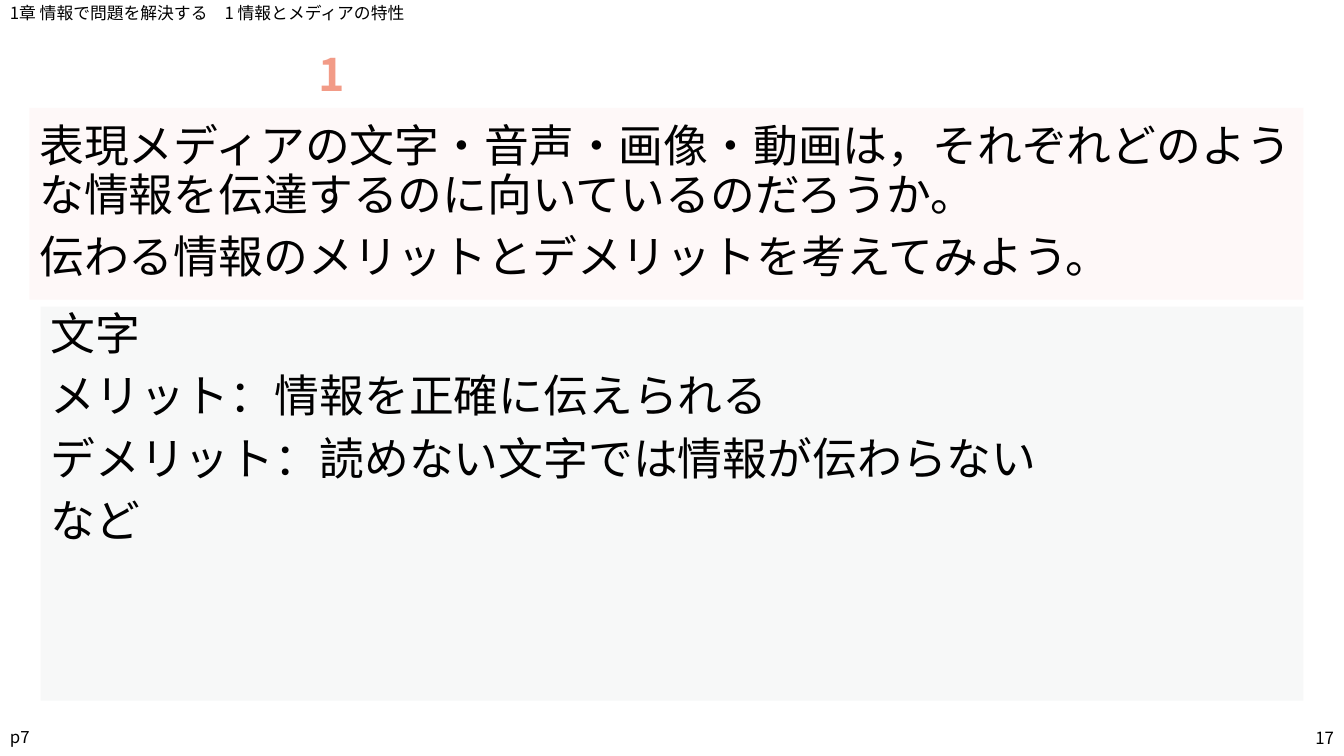
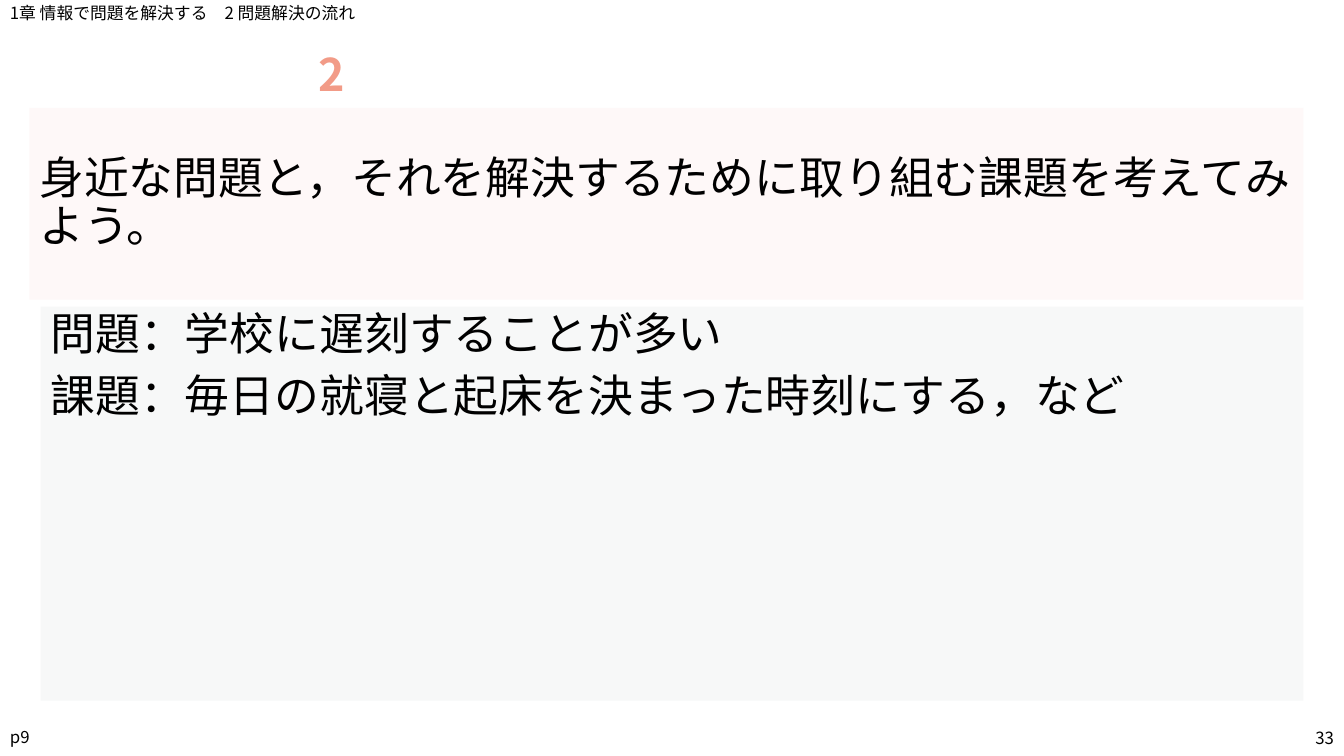
from lxml import etree
from pptx import Presentation
from pptx.dml.color import RGBColor
from pptx.enum.shapes import MSO_SHAPE
from pptx.enum.text import MSO_ANCHOR as ANCHOR, MSO_AUTO_SIZE as AUTO_SIZE, PP_ALIGN as ALIGN
from pptx.oxml.ns import qn
from pptx.util import Pt

FONT = "Noto Sans CJK JP"
COLORS = {
    "text": "000000",
    "title": "F29B87",
    "question": "FEF8F8",
    "answer": "F7F8F8",
}
TITLE_ONLY = 5

# Left, top, width, height in points
HEADER = (0, 0, 690, 20)
TITLE = (220.5, 34.5, 53, 40.5)
QUESTION = (21, 77, 910, 137)
ANSWER = (29, 219, 902, 281.5)
PAGE_REFERENCE = (0, 515, 317, 24)
SLIDE_NUMBER = (744, 515, 216, 24)

LESSONS = [
    {
        "header": "1章 情報で問題を解決する　1 情報とメディアの特性",
        "title": "1",
        "question": [
            "表現メディアの文字・音声・画像・動画は，それぞれどのような情報を伝達するのに向いているのだろうか。",
            "伝わる情報のメリットとデメリットを考えてみよう。",
        ],
        "answer": [
            "文字",
            "メリット：情報を正確に伝えられる",
            "デメリット：読めない文字では情報が伝わらない",
            "など",
        ],
        "page": "p7",
        "number": "17",
    },
    {
        "header": "1章 情報で問題を解決する　2 問題解決の流れ",
        "title": "2",
        "question": ["身近な問題と，それを解決するために取り組む課題を考えてみよう。"],
        "answer": [
            "問題：学校に遅刻することが多い",
            "課題：毎日の就寝と起床を決まった時刻にする，など",
        ],
        "page": "p9",
        "number": "33",
    },
]


def write_text(shape, lines, size=12, color="text", bold=False,
               align=ALIGN.LEFT, anchor=ANCHOR.MIDDLE, line_spacing=0.9):
    frame = shape.text_frame
    frame.word_wrap = True
    frame.auto_size = AUTO_SIZE.NONE
    frame.vertical_anchor = anchor
    for index, line in enumerate(lines):
        paragraph = frame.add_paragraph() if index else frame.paragraphs[0]
        paragraph.alignment = align
        paragraph.line_spacing = line_spacing
        paragraph.space_before = Pt(10 if index else 0)
        run = paragraph.add_run()
        run.text = line
        run.font.size = Pt(size)
        run.font.bold = bold
        run.font.color.rgb = RGBColor.from_string(COLORS[color])
        run.font.name = FONT
        # Japanese glyphs take the East Asian font
        properties = run.font._element
        etree.SubElement(properties, qn("a:ea")).set("typeface", FONT)


def add_box(slide, bounds, lines, fill=None, **text_format):
    bounds = [Pt(length) for length in bounds]
    if fill:
        shape = slide.shapes.add_shape(MSO_SHAPE.RECTANGLE, *bounds)
        shape.shadow.inherit = False
        shape.fill.solid()
        shape.fill.fore_color.rgb = RGBColor.from_string(COLORS[fill])
        shape.line.fill.background()
    else:
        shape = slide.shapes.add_textbox(*bounds)
    write_text(shape, lines, **text_format)


presentation = Presentation()
presentation.slide_width = Pt(960)
presentation.slide_height = Pt(540)

for lesson in LESSONS:
    slide = presentation.slides.add_slide(presentation.slide_layouts[TITLE_ONLY])

    # Title number
    title = slide.shapes.title
    title.left, title.top, title.width, title.height = [Pt(length) for length in TITLE]
    write_text(title, [lesson["title"]], size=32, color="title", bold=True)

    # Chapter header
    add_box(slide, HEADER, [lesson["header"]], anchor=ANCHOR.TOP)

    # Question and answer panels
    add_box(slide, QUESTION, lesson["question"], fill="question", size=32)
    add_box(slide, ANSWER, lesson["answer"], fill="answer", size=32, anchor=ANCHOR.TOP)

    # Footer
    add_box(slide, PAGE_REFERENCE, [lesson["page"]])
    add_box(slide, SLIDE_NUMBER, [lesson["number"]], align=ALIGN.RIGHT, line_spacing=1.0)

presentation.save("out.pptx")
